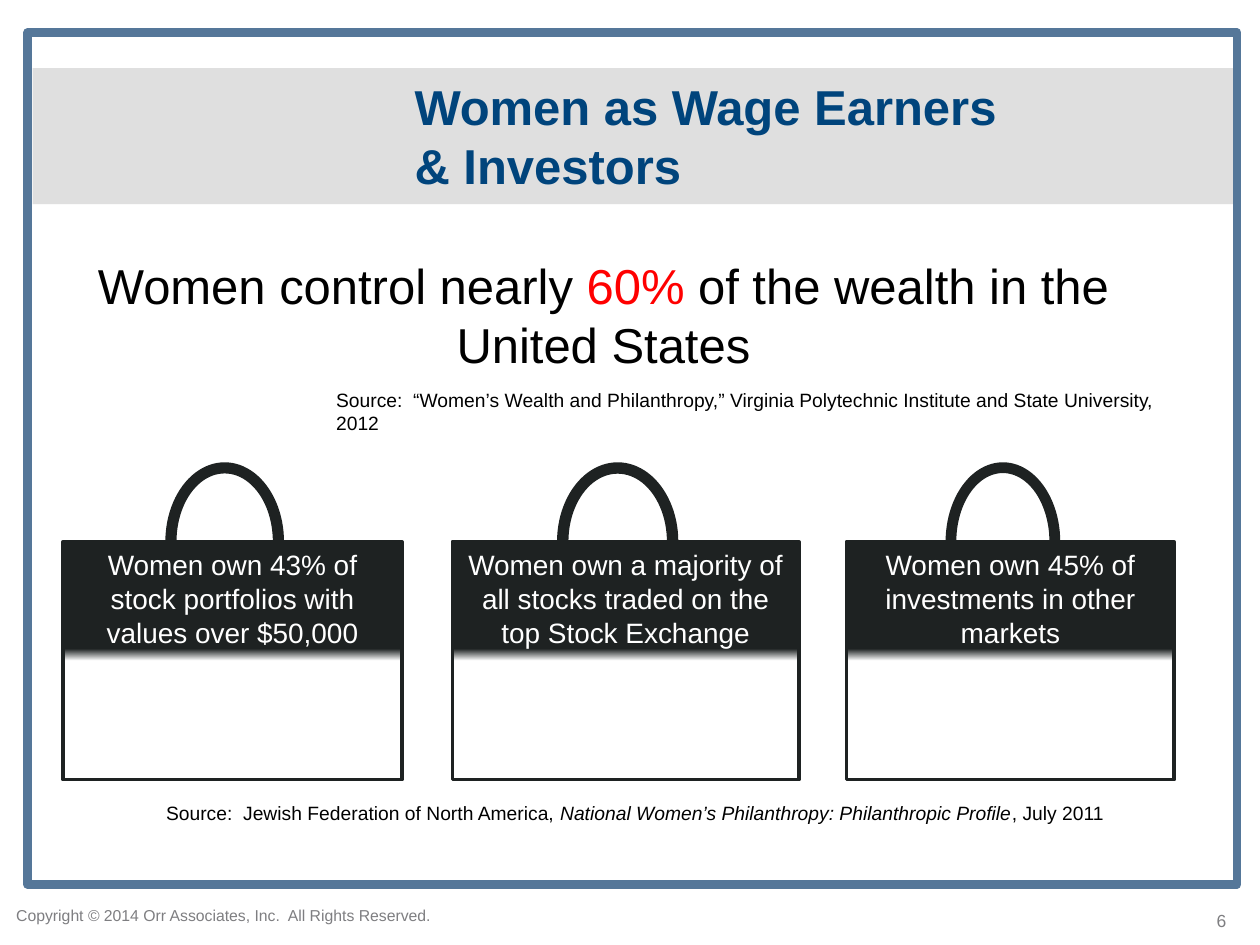
from typing import NamedTuple

from pptx import Presentation
from pptx.dml.color import RGBColor
from pptx.enum.shapes import MSO_SHAPE
from pptx.enum.text import MSO_ANCHOR, MSO_AUTO_SIZE, PP_ALIGN
from pptx.util import Pt

INK = "1E2222"
GREY = "7E7E81"
BLUE = "00447C"


class Box(NamedTuple):
    left: float
    top: float
    width: float
    height: float


class Bag(NamedTuple):
    left: float
    width: float
    text: str


class Part(NamedTuple):
    text: str
    color: str = ""
    italic: bool = False


BAGS = [
    Bag(36, 193.7, "Women own 43% of stock portfolios with values over $50,000"),
    Bag(258.5, 198, "Women own a majority of all stocks traded on the top Stock Exchange"),
    Bag(483.8, 187.2, "Women own 45% of investments in other markets"),
]


def rgb(code: str) -> RGBColor:
    return RGBColor.from_string(code)


def place(box: Box) -> list[Pt]:
    return [Pt(side) for side in box]


def write(shape, *parts: Part, size: float, color: str = "000000", bold: bool = False,
          align=PP_ALIGN.LEFT, anchor=MSO_ANCHOR.TOP) -> None:
    """Fill a shape with one paragraph of formatted runs."""
    frame = shape.text_frame
    frame.word_wrap = True
    frame.auto_size = MSO_AUTO_SIZE.NONE
    frame.vertical_anchor = anchor
    para = frame.paragraphs[0]
    para.alignment = align
    for part in parts:
        for row, line in enumerate(part.text.split("\n")):
            if row:
                para.add_line_break()
            run = para.add_run()
            run.text = line
            font = run.font
            font.name, font.size = "Arial", Pt(size)
            font.bold, font.italic = bold, part.italic
            font.color.rgb = rgb(part.color or color)


def label(slide, box: Box, *parts: Part, **form) -> None:
    write(slide.shapes.add_textbox(*place(box)), *parts, **form)


def draw(shapes, kind, box: Box, fill: str = "", line: str = "", weight: float = 0):
    shape = shapes.add_shape(kind, *place(box))
    shape.shadow.inherit = False
    if fill:
        shape.fill.solid()
        shape.fill.fore_color.rgb = rgb(fill)
    else:
        shape.fill.background()
    if line:
        shape.line.color.rgb = rgb(line)
        shape.line.width = Pt(weight)
    else:
        shape.line.fill.background()
    return shape


def carry(slide, bag: Bag) -> None:
    """Draw a shopping bag: a fading body and an arched handle."""
    shapes = slide.shapes.add_group_shape().shapes
    body = draw(shapes, MSO_SHAPE.RECTANGLE, Box(bag.left, 309.6, bag.width, 136),
                line=INK, weight=2)
    body.fill.gradient()
    body.fill.gradient_angle = 270
    for stop, (pos, tint) in zip(body.fill.gradient_stops, [(0.45, INK), (0.5, "FFFFFF")]):
        stop.position = pos
        stop.color.rgb = rgb(tint)
    write(body, Part(bag.text), size=16, color="FFFFFF", align=PP_ALIGN.CENTER)
    arch = Box(bag.left + 0.302 * bag.width, 264.2, 0.35 * bag.width, 90.7)
    handle = draw(shapes, MSO_SHAPE.BLOCK_ARC, arch, fill=INK)
    for spot, value in enumerate((108, 0, 0.094)):
        handle.adjustments[spot] = value


def main() -> None:
    deck = Presentation()
    deck.slide_width, deck.slide_height = Pt(720), Pt(540)
    slide = deck.slides.add_slide(deck.slide_layouts[5])

    draw(slide.shapes, MSO_SHAPE.RECTANGLE, Box(18.7, 38.9, 687.6, 77.8), fill="DFDFDF")
    draw(slide.shapes, MSO_SHAPE.RECTANGLE, Box(15.8, 18.7, 691.2, 486.7),
         line="557799", weight=5)

    title = slide.shapes.title
    title.left, title.top, title.width, title.height = place(Box(229.7, 70.6, 440.6, 43.9))
    write(title, Part("Women as Wage Earners\n& Investors"), size=28, color=BLUE,
          bold=True, anchor=MSO_ANCHOR.BOTTOM)
    # Bring the title in front of the band
    slide.shapes._spTree.append(title._element)

    label(slide, Box(48.2, 142.6, 593.3, 74.9), Part("Women control nearly "),
          Part("60% ", "FF0000"), Part("of the wealth in the United States"),
          size=28, align=PP_ALIGN.CENTER)
    label(slide, Box(185, 218.2, 484.6, 33.8),
          Part("Source:  “Women’s Wealth and Philanthropy,” Virginia Polytechnic "
               "Institute and State University, 2012"), size=11)

    for bag in BAGS:
        carry(slide, bag)

    label(slide, Box(87.8, 454.3, 581.8, 20.9),
          Part("Source:  Jewish Federation of North America, "),
          Part("National Women’s Philanthropy: Philanthropic Profile", italic=True),
          Part(", July 2011"), size=11)
    label(slide, Box(403.2, 514.1, 304.6, 21.6), Part("6"), size=10, color=GREY,
          align=PP_ALIGN.RIGHT, anchor=MSO_ANCHOR.BOTTOM)
    label(slide, Box(2.2, 496.1, 257, 36),
          Part("Copyright © 2014 Orr Associates, Inc.  All Rights Reserved."),
          size=9, color=GREY, anchor=MSO_ANCHOR.BOTTOM)
    deck.save("out.pptx")


if __name__ == "__main__":
    main()
